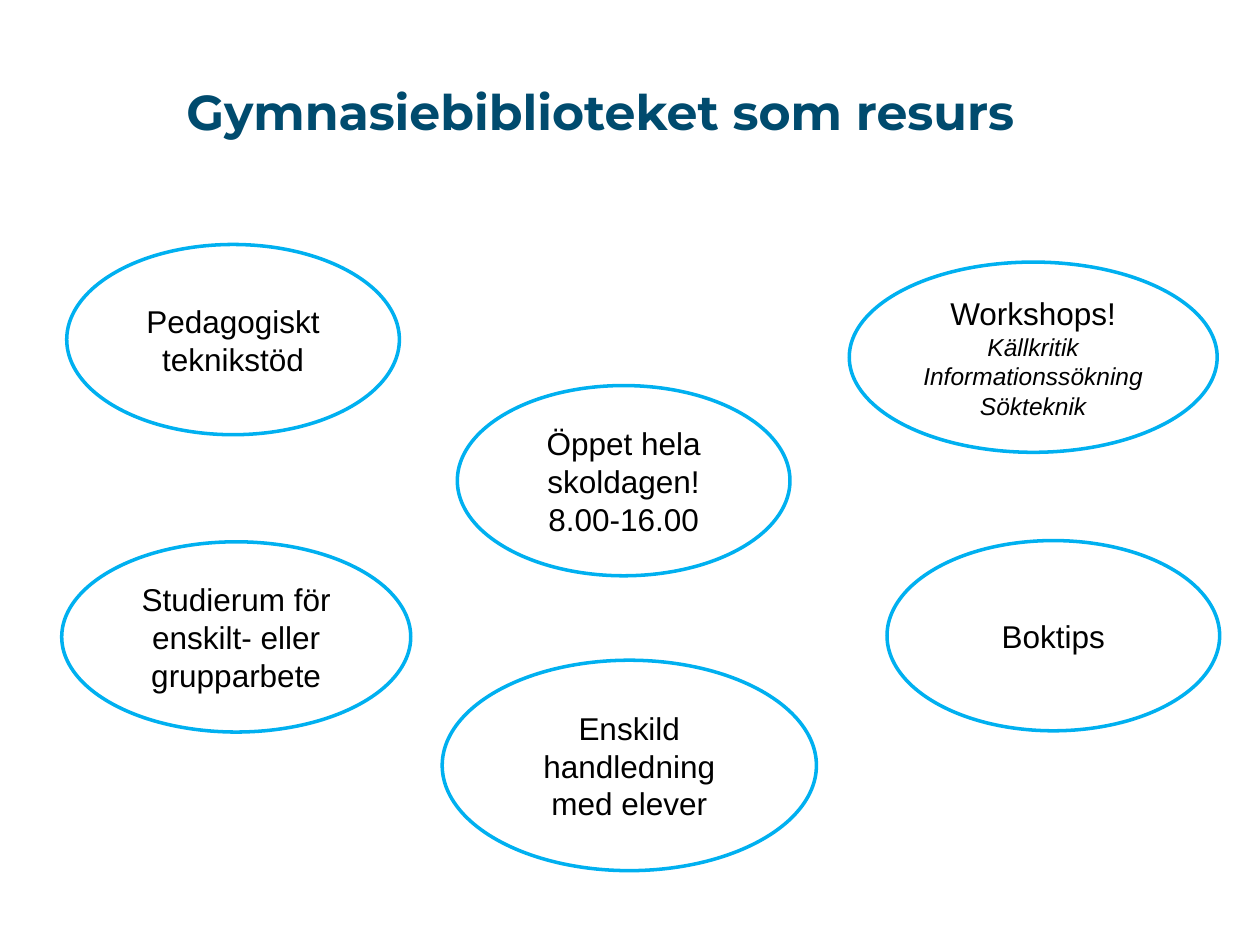
"""Build a slide presenting the upper-secondary school library as a resource."""
from pptx import Presentation
from pptx.dml.color import RGBColor
from pptx.enum.shapes import MSO_SHAPE as SHAPE
from pptx.enum.text import MSO_ANCHOR as ANCHOR, PP_ALIGN as ALIGN
from pptx.util import Inches, Pt

TITLE = "Gymnasiebiblioteket som resurs"
TITLE_BOX = (1.38, 0.6, 7.63, 0.53)
TITLE_FONT = {"name": "Montserrat", "size": Pt(28), "bold": True}
BODY_FONT = {"name": "Arial", "size": Pt(18)}
TOPIC_FONT = {"name": "Arial", "size": Pt(14), "italic": True}

SERVICES = [
    ((0.53, 1.94, 2.64, 1.51), ["Pedagogiskt teknikstöd"], []),
    ((0.49, 4.3, 2.77, 1.51), ["Studierum för enskilt- eller grupparbete"], []),
    ((3.63, 3.06, 2.64, 1.51), ["Öppet hela skoldagen!", "8.00-16.00"], []),
    ((3.51, 5.24, 2.97, 1.67), ["Enskild handledning", "med elever"], []),
    ((7.04, 4.29, 2.64, 1.51), ["Boktips"], []),
    ((6.74, 2.08, 2.92, 1.51), ["Workshops!"],
     ["Källkritik", "Informationssökning", "Sökteknik"]),
]


def rgb(value):
    return RGBColor.from_string(value)


def write(p, text, font, color, align):
    p.alignment = align
    r = p.add_run()
    r.text = text
    for name, value in font.items():
        setattr(r.font, name, value)
    r.font.color.rgb = rgb(color)


def add_title(slide):
    sp = slide.shapes.title
    sp.left, sp.top, sp.width, sp.height = map(Inches, TITLE_BOX)
    tf = sp.text_frame
    tf.word_wrap = True
    tf.vertical_anchor = ANCHOR.TOP
    write(tf.paragraphs[0], TITLE, TITLE_FONT, "004B6E", ALIGN.LEFT)


def add_service(slide, box, lines, topics):
    sp = slide.shapes.add_shape(SHAPE.OVAL, *map(Inches, box))
    sp.shadow.inherit = False
    sp.fill.solid()
    sp.fill.fore_color.rgb = rgb("FFFFFF")
    sp.line.color.rgb = rgb("00B0F0")
    sp.line.width = Pt(2)
    tf = sp.text_frame
    tf.word_wrap = True
    tf.vertical_anchor = ANCHOR.MIDDLE
    styled = [(s, BODY_FONT) for s in lines] + [(s, TOPIC_FONT) for s in topics]
    for i, (text, font) in enumerate(styled):
        p = tf.add_paragraph() if i else tf.paragraphs[0]
        write(p, text, font, "000000", ALIGN.CENTER)


def main():
    prs = Presentation()
    prs.slide_width, prs.slide_height = Inches(10), Inches(7.5)
    slide = prs.slides.add_slide(prs.slide_layouts[5])
    add_title(slide)
    for service in SERVICES:
        add_service(slide, *service)
    prs.save("out.pptx")


if __name__ == "__main__":
    main()
